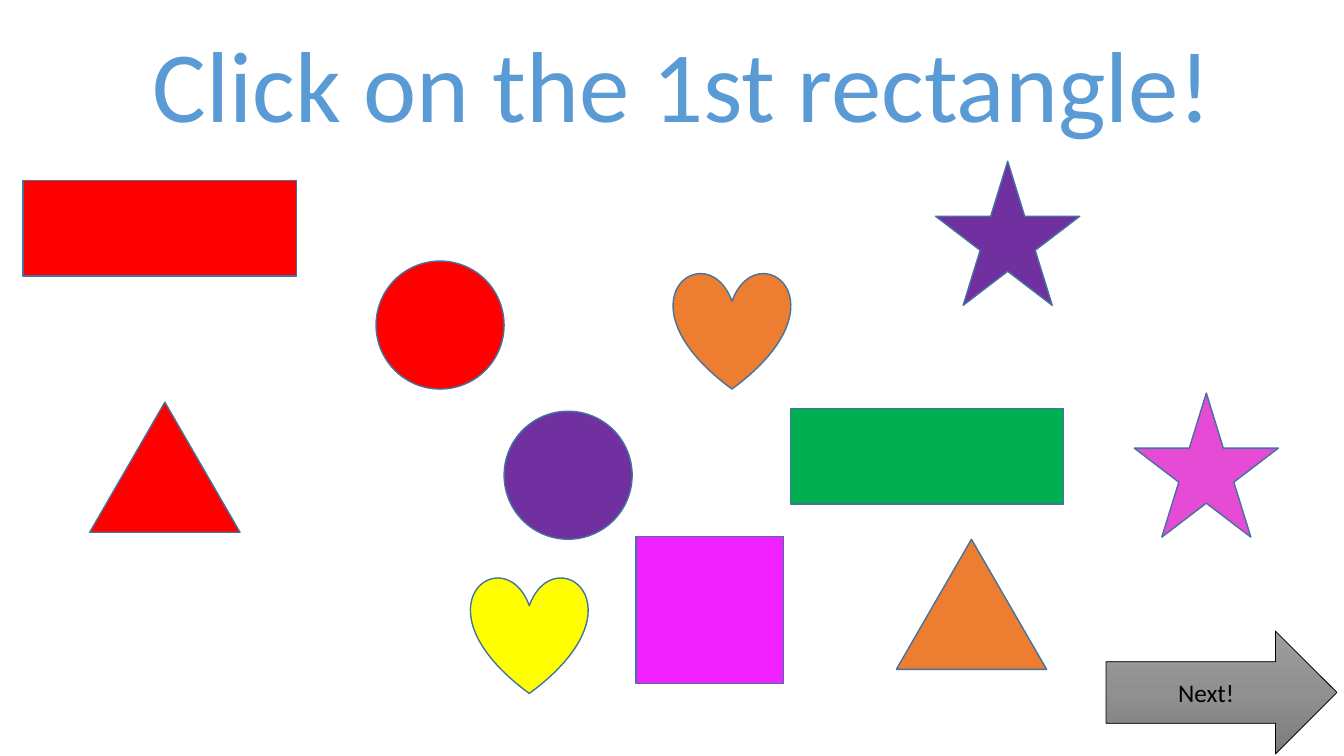
from copy import deepcopy

from pptx import Presentation
from pptx.dml.color import RGBColor
from pptx.enum.shapes import MSO_SHAPE
from pptx.enum.text import MSO_ANCHOR, MSO_AUTO_SIZE, PP_ALIGN
from pptx.oxml.ns import qn
from pptx.util import Emu, Pt

EMU_PER_PX = 9144  # 100 px to the inch
FONT = "Calibri"

BLACK = RGBColor(0x00, 0x00, 0x00)
TITLE_BLUE = RGBColor(0x5B, 0x9B, 0xD5)
OUTLINE_BLUE = RGBColor(0x43, 0x73, 0x9E)
RED = RGBColor(0xFF, 0x00, 0x00)
ORANGE = RGBColor(0xED, 0x7D, 0x31)
YELLOW = RGBColor(0xFF, 0xFF, 0x00)
GREEN = RGBColor(0x00, 0xB0, 0x50)
PURPLE = RGBColor(0x70, 0x30, 0xA0)
MAGENTA = RGBColor(0xF1, 0x20, 0xFE)
PINK = RGBColor(0xE5, 0x4B, 0xD5)
ARROW_GREYS = (
    (0, RGBColor(0x9D, 0x9D, 0x9D)),
    (0.5, RGBColor(0x90, 0x90, 0x90)),
    (1, RGBColor(0x7C, 0x7C, 0x7C)),
)

HEART = (MSO_SHAPE.HEART, 116, 116)
TRIANGLE = (MSO_SHAPE.ISOSCELES_TRIANGLE, 149, 129)
CIRCLE = (MSO_SHAPE.OVAL, 127, 127)
SQUARE = (MSO_SHAPE.RECTANGLE, 146, 146)
RECTANGLE = (MSO_SHAPE.RECTANGLE, 271, 95)
STAR = (MSO_SHAPE.STAR_5_POINT, 143, 143)
ARROW = (MSO_SHAPE.RIGHT_ARROW, 229, 122)

# Figure, left, top, colour; from back to front
FIGURES_BEHIND = (
    (HEART, 668, 270, ORANGE),
    (TRIANGLE, 889, 535, ORANGE),
    (CIRCLE, 500, 408, PURPLE),
    (SQUARE, 631, 532, MAGENTA),
    (STAR, 928, 160, PURPLE),
    (RECTANGLE, 784, 405, GREEN),
)
FIGURES_IN_FRONT = (
    (RECTANGLE, 23, 179, RED),
    (HEART, 467, 572, YELLOW),
    (CIRCLE, 373, 259, RED),
    (STAR, 1125, 390, PINK),
    (TRIANGLE, 89, 399, RED),
)


def px(length):
    return Emu(length * EMU_PER_PX)


def add_outlined(slide, figure, left, top, line_color, line_width):
    preset, width, height = figure
    outlined = slide.shapes.add_shape(
        preset, px(left), px(top), px(width), px(height))
    outlined.shadow.inherit = False
    outlined.line.color.rgb = line_color
    outlined.line.width = Pt(line_width)
    return outlined


def add_figure(slide, figure, left, top, color):
    drawn = add_outlined(slide, figure, left, top, OUTLINE_BLUE, 1)
    drawn.fill.solid()
    drawn.fill.fore_color.rgb = color


def write_centered(frame, text, size, color):
    paragraph = frame.paragraphs[0]
    paragraph.alignment = PP_ALIGN.CENTER
    run = paragraph.add_run()
    run.text = text
    run.font.name = FONT
    run.font.size = Pt(size)
    run.font.color.rgb = color


def add_title(slide, text):
    title = slide.shapes.add_textbox(px(136), px(17), px(1082), px(131))
    title.text_frame.word_wrap = False
    title.text_frame.auto_size = MSO_AUTO_SIZE.SHAPE_TO_FIT_TEXT
    write_centered(title.text_frame, text, 72, TITLE_BLUE)


def fill_downward(shape, shades):
    """Fill with a top-to-bottom gradient of (position, colour) shades."""
    shape.fill.gradient()
    shape.fill.gradient_angle = 270
    stop_list = next(shape._element.spPr.iter(qn("a:gsLst")))
    while len(stop_list) < len(shades):
        stop_list.append(deepcopy(stop_list[-1]))
    for stop, (position, color) in zip(shape.fill.gradient_stops, shades):
        stop.position = position
        stop.color.rgb = color


def add_next_arrow(slide, text):
    arrow = add_outlined(slide, ARROW, 1097, 626, BLACK, 0.5)
    fill_downward(arrow, ARROW_GREYS)
    arrow.text_frame.vertical_anchor = MSO_ANCHOR.MIDDLE
    write_centered(arrow.text_frame, text, 18, BLACK)


def main():
    presentation = Presentation()
    presentation.slide_width = px(1333)
    presentation.slide_height = px(750)
    slide = presentation.slides.add_slide(presentation.slide_layouts[6])

    for figure in FIGURES_BEHIND:
        add_figure(slide, *figure)
    add_title(slide, "Click on the 1st rectangle!")
    add_next_arrow(slide, "Next!")
    for figure in FIGURES_IN_FRONT:
        add_figure(slide, *figure)

    presentation.save("out.pptx")


if __name__ == "__main__":
    main()
